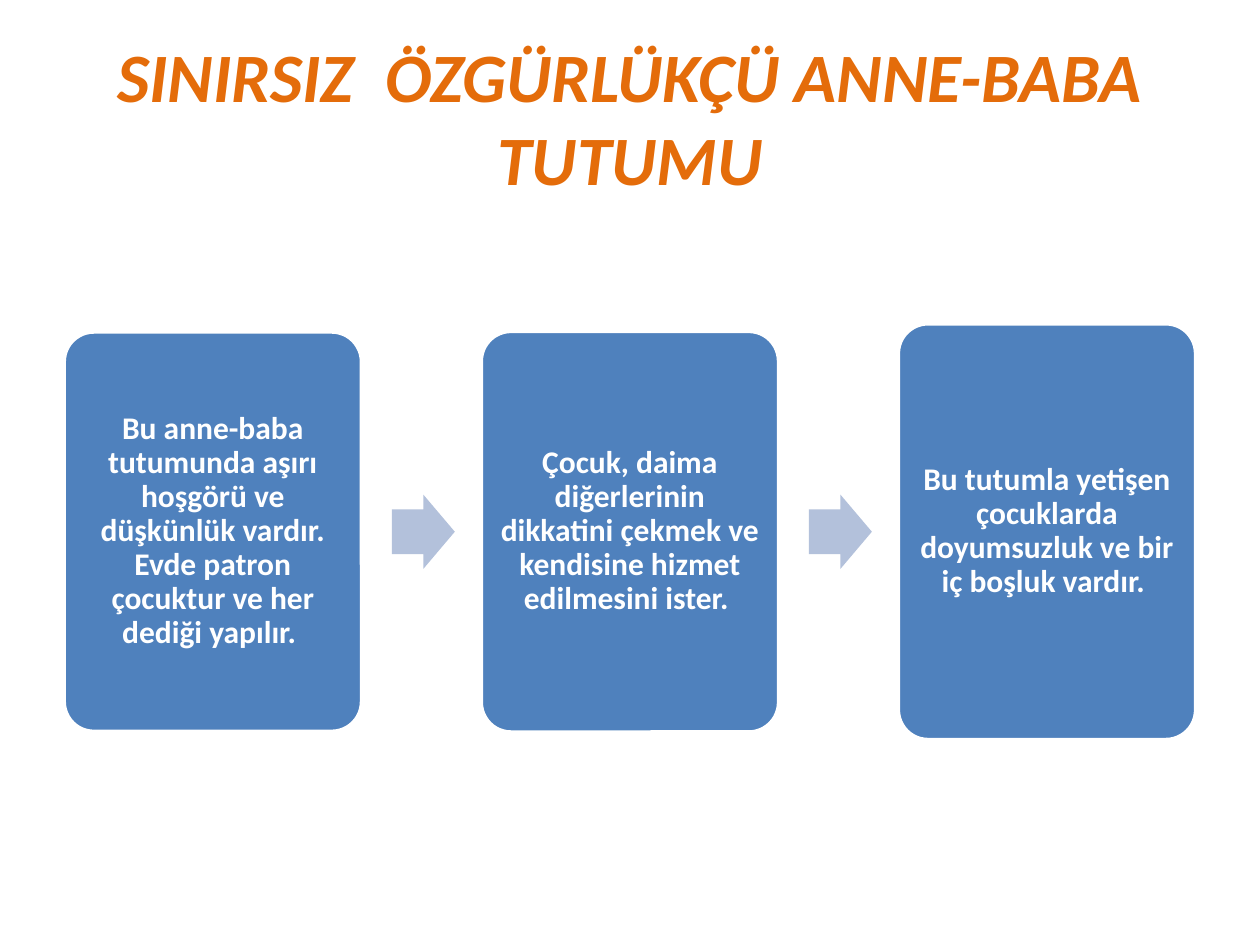
from dataclasses import dataclass

from pptx import Presentation
from pptx.dml.color import RGBColor
from pptx.enum.shapes import MSO_SHAPE
from pptx.enum.text import MSO_ANCHOR, MSO_AUTO_SIZE, PP_ALIGN
from pptx.util import Inches, Pt


@dataclass(frozen=True)
class Theme:
    font: str = "Calibri"
    title_size: float = 39.6
    card_size: float = 18
    title_color: str = "E46C0A"
    card_fill: str = "4F81BD"
    arrow_fill: str = "B3C1DB"
    white: str = "FFFFFF"


THEME = Theme()
TITLE = "SINIRSIZ  ÖZGÜRLÜKÇÜ ANNE-BABA TUTUMU"
STEPS = [
    ("Bu anne-baba tutumunda aşırı hoşgörü ve düşkünlük vardır. "
     "Evde patron çocuktur ve her dediği yapılır. ", 3.17),
    ("Çocuk, daima diğerlerinin dikkatini çekmek ve "
     "kendisine hizmet edilmesini ister. ", 3.18),
    ("Bu tutumla yetişen çocuklarda doyumsuzluk ve "
     "bir iç boşluk vardır. ", 3.3),
]
FIRST_LEFT = 0.51
COLUMN_PITCH = 3.31
ROW_CENTER = 4.22
CARD_WIDTH = 2.36
ARROW_OFFSET = 2.6
ARROW_WIDTH, ARROW_HEIGHT = 0.5, 0.59
CARD_INSET = 0.07


def write_text(frame, text, size, color, italic=False):
    frame.text = text
    frame.word_wrap = True
    frame.auto_size = MSO_AUTO_SIZE.NONE
    frame.vertical_anchor = MSO_ANCHOR.MIDDLE
    para = frame.paragraphs[0]
    para.alignment = PP_ALIGN.CENTER
    font = para.runs[0].font
    font.name = THEME.font
    font.size = Pt(size)
    font.bold = True
    font.italic = italic
    font.color.rgb = RGBColor.from_string(color)


def add_title(page):
    title = page.shapes.title
    title.left, title.top = Inches(0.5), Inches(0.3)
    title.width, title.height = Inches(9), Inches(1.25)
    write_text(title.text_frame, TITLE, THEME.title_size, THEME.title_color, italic=True)


def add_centered_shape(page, kind, left, width, height, fill):
    top = ROW_CENTER - height / 2
    shape = page.shapes.add_shape(
        kind, Inches(left), Inches(top), Inches(width), Inches(height)
    )
    shape.shadow.inherit = False
    shape.fill.solid()
    shape.fill.fore_color.rgb = RGBColor.from_string(fill)
    return shape


def add_card(page, left, text, height):
    card = add_centered_shape(
        page, MSO_SHAPE.ROUNDED_RECTANGLE, left, CARD_WIDTH, height, THEME.card_fill
    )
    card.adjustments[0] = 0.1
    card.line.color.rgb = RGBColor.from_string(THEME.white)
    card.line.width = Pt(2)
    frame = card.text_frame
    frame.margin_left = frame.margin_right = Inches(CARD_INSET)
    frame.margin_top = frame.margin_bottom = Inches(CARD_INSET)
    write_text(frame, text, THEME.card_size, THEME.white)
    frame.paragraphs[0].line_spacing = 0.9


def add_arrow(page, left):
    arrow = add_centered_shape(
        page, MSO_SHAPE.RIGHT_ARROW, left, ARROW_WIDTH, ARROW_HEIGHT, THEME.arrow_fill
    )
    arrow.adjustments[0] = 0.6
    arrow.adjustments[1] = 0.5
    arrow.line.fill.background()


def main():
    deck = Presentation()
    deck.slide_width, deck.slide_height = Inches(10), Inches(7.5)
    page = deck.slides.add_slide(deck.slide_layouts[5])
    add_title(page)
    for column, (text, height) in enumerate(STEPS):
        left = FIRST_LEFT + column * COLUMN_PITCH
        add_card(page, left, text, height)
        if column < len(STEPS) - 1:
            add_arrow(page, left + ARROW_OFFSET)
    deck.save("out.pptx")


if __name__ == "__main__":
    main()
